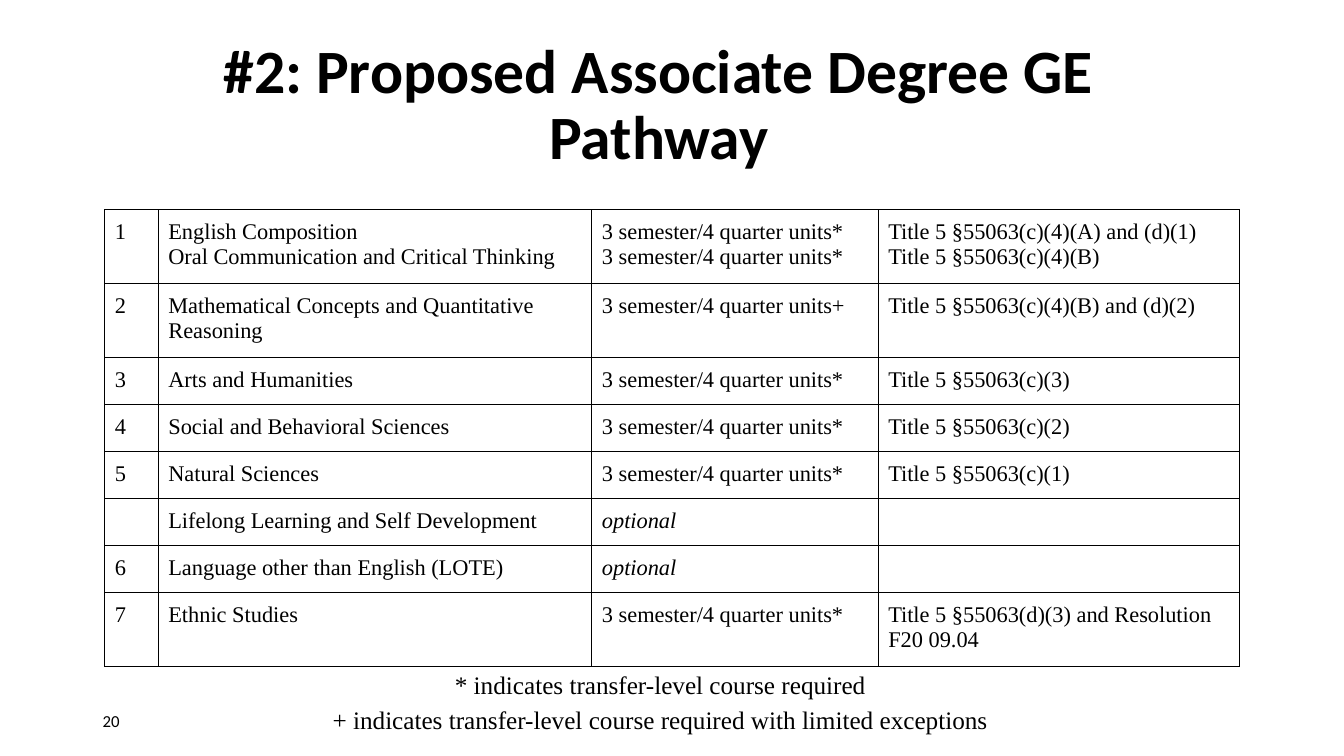
from dataclasses import dataclass, field

from lxml.etree import SubElement
from pptx import Presentation
from pptx.dml.color import RGBColor
from pptx.enum.text import MSO_ANCHOR as ANCHOR, PP_ALIGN as ALIGN
from pptx.oxml.ns import qn
from pptx.util import Inches, Pt

BLACK = RGBColor(0x00, 0x00, 0x00)
SERIF, SANS = "Times New Roman", "Calibri"
MARGINS = ("margin_left", "margin_right", "margin_top", "margin_bottom")
CELL_FONT = {"name": SERIF, "size": Pt(16)}
BORDER_WIDTH = Pt(0.75)


@dataclass
class TextBox:
    box: tuple[float, float, float, float]
    lines: list[str]
    font: dict
    paragraph: dict = field(default_factory=dict)
    anchor: ANCHOR = ANCHOR.MIDDLE
    inset_y: float = 0.05


@dataclass
class Area:
    number: str
    subject: str
    units: str = "3 semester/4 quarter units*"
    rule: str = ""
    height: float = 0.466


TALL = 0.733
OPTIONAL = "optional"
COLUMN_WIDTHS = (0.53, 4.3, 2.84, 3.58)
AREAS = [
    Area("1", "English Composition\nOral Communication and Critical Thinking",
         "3 semester/4 quarter units*\n3 semester/4 quarter units*",
         "Title 5 §55063(c)(4)(A) and (d)(1)\nTitle 5 §55063(c)(4)(B)", TALL),
    Area("2", "Mathematical Concepts and Quantitative Reasoning",
         "3 semester/4 quarter units+", "Title 5 §55063(c)(4)(B) and (d)(2)", TALL),
    Area("3", "Arts and Humanities", rule="Title 5 §55063(c)(3)"),
    Area("4", "Social and Behavioral Sciences", rule="Title 5 §55063(c)(2)"),
    Area("5", "Natural Sciences", rule="Title 5 §55063(c)(1)"),
    Area("", "Lifelong Learning and Self Development", OPTIONAL),
    Area("6", "Language other than English (LOTE)", OPTIONAL),
    Area("7", "Ethnic Studies",
         rule="Title 5 §55063(d)(3) and Resolution F20 09.04", height=TALL),
]

PAGE_NUMBER = TextBox((0.92, 6.95, 3, 0.4), ["20"], {"name": SANS, "size": Pt(12)})
FOOTNOTES = TextBox(
    (2.8, 6.5, 7.5, 0.9),
    ["* indicates transfer-level course required",
     "+ indicates transfer-level course required with limited exceptions"],
    {"name": SERIF, "size": Pt(18)},
    {"alignment": ALIGN.CENTER, "line_spacing": 1.15}, ANCHOR.TOP, 0.1)
TITLE = TextBox(
    (1.04, 0.33, 10.99, 1.45), ["#2: Proposed Associate Degree GE Pathway"],
    {"name": SANS, "size": Pt(44), "bold": True},
    {"alignment": ALIGN.CENTER, "line_spacing": 0.9})


def set_all(target, values: dict) -> None:
    for name, value in values.items():
        setattr(target, name, value)


def write_lines(tf, lines: list[str], font: dict, paragraph: dict) -> None:
    for i, line in enumerate(lines):
        p = tf.paragraphs[0] if i == 0 else tf.add_paragraph()
        set_all(p, paragraph)
        r = p.add_run()
        r.text = line
        set_all(r.font, font)
        r.font.color.rgb = BLACK


def add_text(s, item: TextBox) -> None:
    sp = s.shapes.add_textbox(*map(Inches, item.box))
    tf = sp.text_frame
    inset = Inches(item.inset_y)
    set_all(tf, {"word_wrap": True, "vertical_anchor": item.anchor,
                 "margin_top": inset, "margin_bottom": inset})
    write_lines(tf, item.lines, item.font, item.paragraph)


def add_borders(cell) -> None:
    tc_pr = cell._tc.get_or_add_tcPr()
    for i, side in enumerate(("lnL", "lnR", "lnT", "lnB")):
        ln = tc_pr.makeelement(qn(f"a:{side}"), {"w": str(BORDER_WIDTH)})
        fill = SubElement(ln, qn("a:solidFill"))
        SubElement(fill, qn("a:srgbClr"), val=str(BLACK))
        tc_pr.insert(i, ln)


def fill_cell(cell, text: str) -> None:
    set_all(cell, dict.fromkeys(MARGINS, Inches(0.1)))
    cell.fill.background()
    add_borders(cell)
    if text:
        font = CELL_FONT | {"italic": text == OPTIONAL}
        write_lines(cell.text_frame, text.split("\n"), font, {})
    else:
        # An empty cell keeps the row's text size
        p = cell.text_frame.paragraphs[0]
        SubElement(p._p, qn("a:endParaRPr"), sz="1600")


def add_area_table(s, areas: list[Area]) -> None:
    height = sum(area.height for area in areas)
    frame = s.shapes.add_table(
        len(areas), len(COLUMN_WIDTHS), Inches(1.04), Inches(2.08),
        Inches(sum(COLUMN_WIDTHS)), Inches(height))
    table = frame.table
    set_all(table, {"first_row": False, "horz_banding": False})
    for column, width in zip(table.columns, COLUMN_WIDTHS):
        column.width = Inches(width)
    for row, area in zip(table.rows, areas):
        row.height = Inches(area.height)
        texts = (area.number, area.subject, area.units, area.rule)
        for cell, text in zip(row.cells, texts):
            fill_cell(cell, text)


def main() -> None:
    prs = Presentation()
    prs.slide_width, prs.slide_height = Inches(13.33), Inches(7.5)
    s = prs.slides.add_slide(prs.slide_layouts[6])

    # Page number and footnotes
    add_text(s, PAGE_NUMBER)
    add_text(s, FOOTNOTES)

    # General education areas
    add_area_table(s, AREAS)

    # Title
    add_text(s, TITLE)

    prs.save("out.pptx")


if __name__ == "__main__":
    main()
